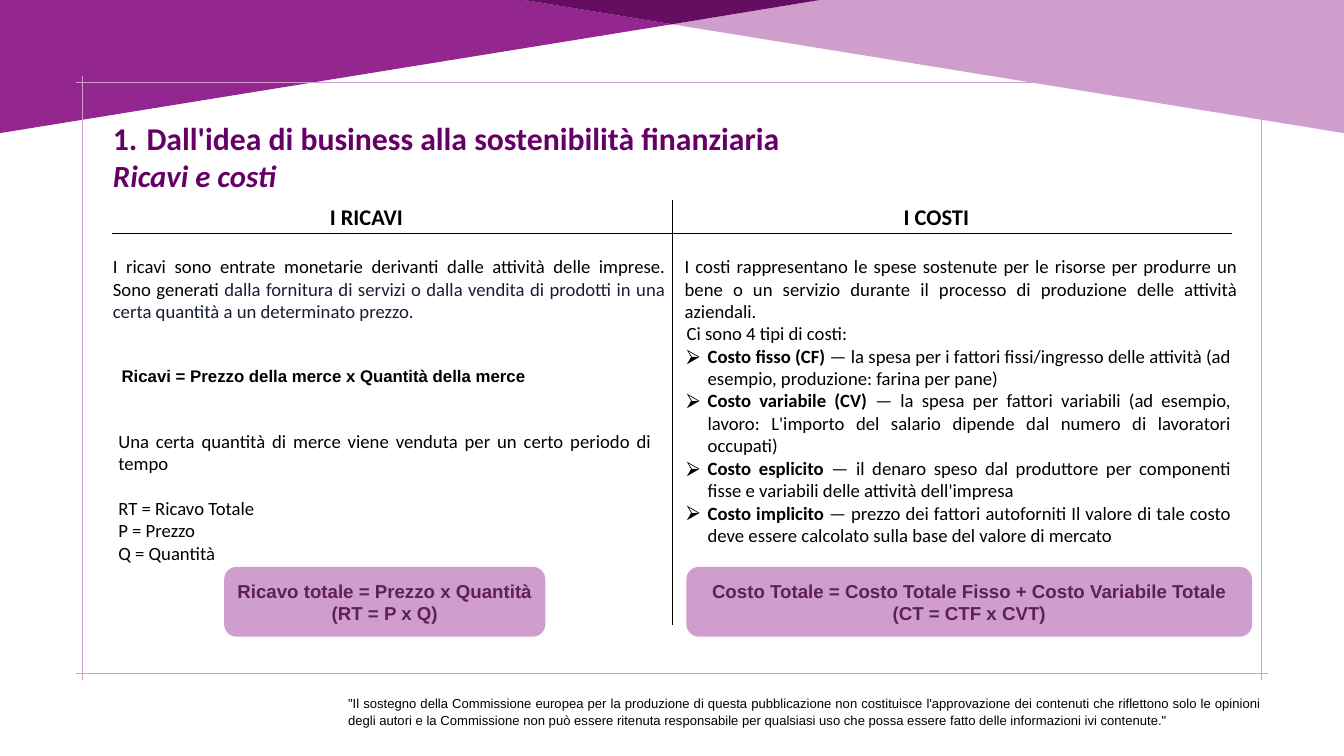
import pptx
import pptx.util
import pptx.dml.color
import pptx.enum.text
import pptx.enum.shapes
import pptx.oxml.ns
import lxml.etree

Pt = pptx.util.Pt
Hue = pptx.dml.color.RGBColor.from_string
Align = pptx.enum.text.PP_ALIGN
Anchor = pptx.enum.text.MSO_ANCHOR
Fit = pptx.enum.text.MSO_AUTO_SIZE
Kind = pptx.enum.shapes.MSO_SHAPE
qn = pptx.oxml.ns.qn

HUES = {"purple": "93268F", "pink": "CF9ECC", "dark": "640D61", "title": "660066",
        "plum": "5F1F5A", "black": "000000", "navy": "181D34"}
BODY = {"name": "Calibri", "size": Pt(20), "bold": False, "italic": False}
BOLD = {**BODY, "bold": True}
HEAD = {**BOLD, "size": Pt(24)}
TITLE = {**BOLD, "size": Pt(34)}
SUB = {**TITLE, "size": Pt(33), "italic": True}
NOTE = {**BODY, "name": "Arial", "size": Pt(14)}
RULE = {**BOLD, "name": "Arial", "size": Pt(18)}
SUM = {**RULE, "size": Pt(20)}
FLUSH = {"alignment": Align.JUSTIFY}
MID = {"alignment": Align.CENTER}


def put(thing, vals):
    for key, val in vals.items():
        setattr(thing, key, val)


def sub(node, tag, **vals):
    return lxml.etree.SubElement(node, qn(tag), vals)


def mark(para, sign):
    props = para._p.get_or_add_pPr()
    left = Pt(22.5) if sign else 0
    props.set("marL", str(left))
    props.set("indent", str(-left))
    if sign:
        sub(sub(props, "a:buClr"), "a:srgbClr", val=HUES["black"])
        sub(props, "a:buFont", typeface="Arial")
        sub(props, "a:buChar", char=sign)
    else:
        sub(props, "a:buNone")


def write(shape, paras, anchor=Anchor.TOP):
    frame = shape.text_frame
    put(frame, {"word_wrap": True, "auto_size": Fit.NONE, "vertical_anchor": anchor})
    for num, (runs, form, sign) in enumerate(paras):
        para = frame.add_paragraph() if num else frame.paragraphs[0]
        mark(para, sign)
        put(para, {"alignment": Align.LEFT, "space_before": Pt(0), **form})
        for text, style, hue in runs:
            run = para.add_run()
            run.text = text
            put(run.font, style)
            run.font.color.rgb = Hue(HUES[hue])


def line(text, style=BODY, form=FLUSH, hue="black"):
    return [(text, style, hue)], form, None


def place(shape, box):
    put(shape, dict(zip(("left", "top", "width", "height"), map(Pt, box))))
    return shape


def note(slide, box, paras):
    write(slide.shapes.add_textbox(*map(Pt, box)), paras)


def stroke(slide, ends, hue):
    link = slide.shapes.add_connector(pptx.enum.shapes.MSO_CONNECTOR.STRAIGHT, *map(Pt, ends))
    link.line.color.rgb = Hue(HUES[hue])
    link.line.width = Pt(0.75)
    sub(link._element.spPr, "a:effectLst")


def paint(shape, hue):
    shape.shadow.inherit = False
    shape.fill.solid()
    shape.fill.fore_color.rgb = Hue(HUES[hue])


def band(slide, box):
    x, y, w, h = box
    mid, tip, gap = x + w / 2, y + 26, 158.4
    wings = [
        ("purple", [(x, y + h), (x, y), (mid - gap, y), (mid, tip)]),
        ("pink", [(x + w, y + h), (x + w, y), (mid + gap, y), (mid, tip)]),
        ("dark", [(mid, tip), (mid - gap, y), (mid + gap, y)]),
    ]
    for hue, dots in wings:
        dots = [(Pt(a), Pt(b)) for a, b in dots]
        path = slide.shapes.build_freeform(*dots[0])
        path.add_line_segments(dots[1:], close=True)
        shape = path.convert_to_shape()
        paint(shape, hue)
        shape.line.fill.background()


def border(slide, box):
    x, y, w, h = box
    over = 7.2
    for row in (y, y + h):
        stroke(slide, (x - over, row, x + w + over, row), "pink")
    for col in (x, x + w):
        stroke(slide, (col, y - over, col, y + h + over), "pink")


def header(slide, box):
    write(place(slide.shapes.title, box), [
        line("1.\tDall'idea di business alla sostenibilità finanziaria", TITLE, {}, "title"),
        line("Ricavi e costi", SUB, {}, "title")])


def cross(slide, box):
    x, y, w, h = box
    stroke(slide, (x + w / 2, y, x + w / 2, y + h), "black")
    stroke(slide, (x, y + 36, x + w, y + 36), "black")


def result(slide, box, texts):
    shape = slide.shapes.add_shape(Kind.ROUNDED_RECTANGLE, *map(Pt, box))
    paint(shape, "pink")
    shape.line.color.rgb = Hue(HUES["pink"])
    shape.line.width = Pt(2)
    write(shape, [line(text, SUM, MID, "plum") for text in texts], Anchor.MIDDLE)


def income(slide, box):
    x, y, w, h = box
    note(slide, (x + 232.5, y, 132, 36), [line("I RICAVI", HEAD, {})])
    note(slide, (x, y + 55.5, w, 80), [([
        ("I ricavi sono entrate monetarie derivanti dalle attività delle imprese. "
         "Sono generati ", BODY, "black"),
        ("dalla fornitura di servizi o dalla vendita di prodotti in una certa quantità "
         "a un determinato prezzo.", BODY, "navy")], FLUSH, None)])
    note(slide, (x + 9.4, y + 174.3, 578, 29),
         [line("Ricavi = Prezzo della merce x Quantità della merce", RULE, {})])
    write(place(slide.placeholders[1], (x + 5.8, y + 242, 585.4, 152.6)), [
        line("Una certa quantità di merce viene venduta per un certo periodo di tempo"),
        line("RT = Ricavo Totale", form={**FLUSH, "space_before": Pt(24)}),
        line("P = Prezzo"),
        line("Q = Quantità")])
    result(slide, (x + 127.4, y + h - 72.7, 342, 72.7),
           ["Ricavo totale = Prezzo x Quantità", "(RT = P x Q)"])


def costs(slide, box):
    x, y, w, h = box
    note(slide, (x + 234.7, y, 114, 36), [line("I COSTI", HEAD, {})])
    note(slide, (x, y + 55.5, w, 55.5), [line(
        "I costi rappresentano le spese sostenute per le risorse per produrre un bene "
        "o un servizio durante il processo di produzione delle attività aziendali.")])
    kinds = [
        ("Costo fisso (CF) ", "— la spesa per i fattori fissi/ingresso delle attività "
         "(ad esempio, produzione: farina per pane)"),
        ("Costo variabile (CV) ", "— la spesa per fattori variabili (ad esempio, lavoro: "
         "L'importo del salario dipende dal numero di lavoratori occupati)"),
        ("Costo esplicito ", "— il denaro speso dal produttore per componenti fisse e "
         "variabili delle attività dell'impresa"),
        ("Costo implicito ", "— prezzo dei fattori autoforniti Il valore di tale costo "
         "deve essere calcolato sulla base del valore di mercato"),
    ]
    items = [([(term, BOLD, "black"), (text, BODY, "black")], FLUSH, "⮚")
             for term, text in kinds]
    write(place(slide.placeholders[2], (x + 2, y + 127, 597.6, 250)),
          [line("Ci sono 4 tipi di costi:")] + items)
    result(slide, (x + 10, y + h - 72.7, 604, 72.7),
           ["Costo Totale = Costo Totale Fisso + Costo Variabile Totale", "(CT = CTF x CVT)"])


def footer(slide, box):
    note(slide, box, [line(
        "\"Il sostegno della Commissione europea per la produzione di questa pubblicazione "
        "non costituisce l'approvazione dei contenuti che riflettono solo le opinioni degli "
        "autori e la Commissione non può essere ritenuta responsabile per qualsiasi uso che "
        "possa essere fatto delle informazioni ivi contenute.\"",
        NOTE, {**FLUSH, "line_spacing": 1.07})])


def main():
    deck = pptx.Presentation()
    put(deck, {"slide_width": Pt(1440), "slide_height": Pt(810)})
    slide = deck.slides.add_slide(deck.slide_layouts[3])
    band(slide, (0, 0, 1440, 142.6))
    border(slide, (88.2, 88.2, 1263.6, 633.6))
    header(slide, (113.8, 123.8, 995.8, 88.6))
    cross(slide, (120, 213.8, 1200, 455.8))
    income(slide, (113.8, 214.5, 606.2, 466.6))
    costs(slide, (726.5, 214.5, 606.2, 466.6))
    footer(slide, (365.8, 740.9, 992.9, 37.4))
    deck.save("out.pptx")


if __name__ == "__main__":
    main()
